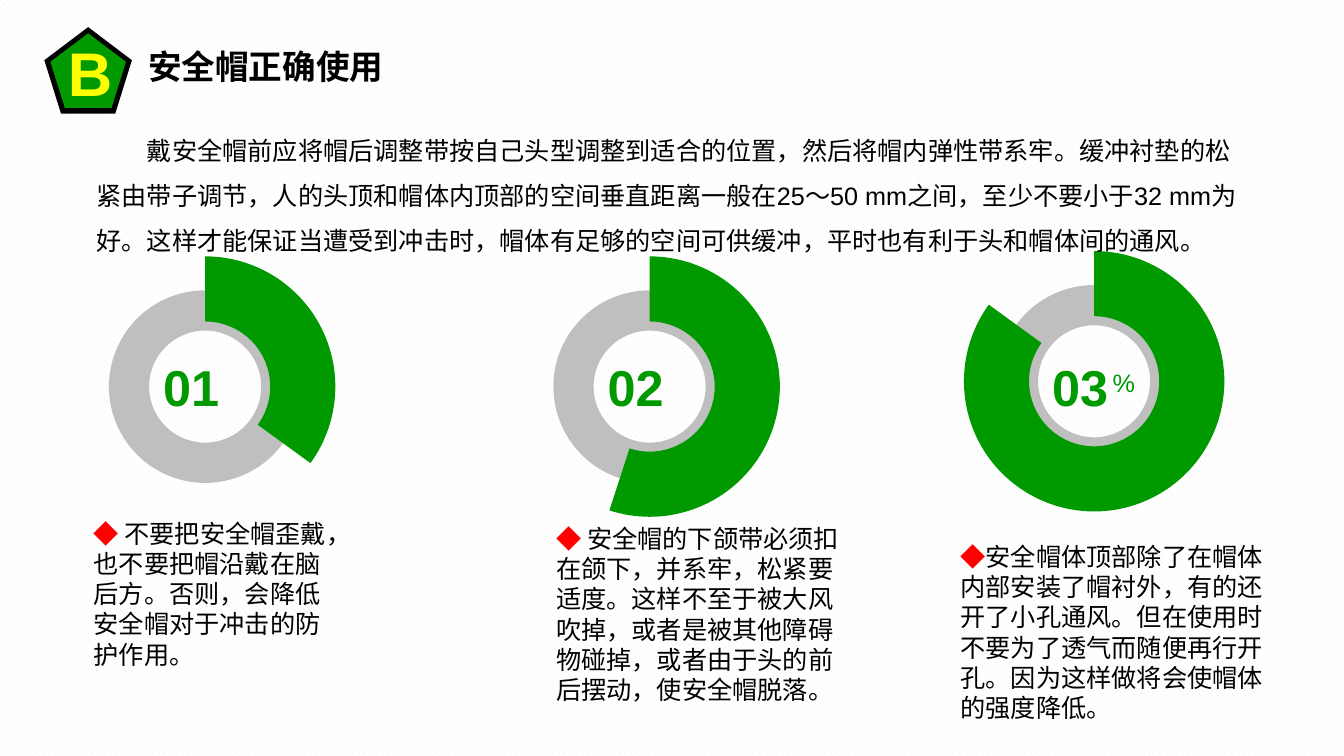
from lxml import etree
from pptx import Presentation
from pptx.chart.data import CategoryChartData
from pptx.dml.color import RGBColor
from pptx.enum import chart, dml, shapes, text
from pptx.util import Pt

FONT = "Arial"
COLORS = {"green": "009900", "gray": "BFBFBF", "black": "000000", "red": "FF0000",
          "yellow": "FFFF00", "white": "FFFFFF", "hatch": "F2F2F2"}
TITLE = "安全帽正确使用"
INTRO = ("戴安全帽前应将帽后调整带按自己头型调整到适合的位置，然后将帽内弹性带系牢。"
         "缓冲衬垫的松紧由带子调节，人的头顶和帽体内顶部的空间垂直距离一般在25～50 mm之间，"
         "至少不要小于32 mm为好。这样才能保证当遭受到冲击时，帽体有足够的空间可供缓冲，"
         "平时也有利于头和帽体间的通风。")
RULES = [
    {"no": "01", "share": 35, "ring_top": 207.4, "box": (59.8, 366.5, 180.7, 116.6),
     "body": " 不要把安全帽歪戴，也不要把帽沿戴在脑后方。否则，会降低安全帽对于冲击的防护作用。"},
    {"no": "02", "share": 55, "ring_top": 207.4, "box": (390.2, 370.1, 222.5, 138.2),
     "body": " 安全帽的下颌带必须扣在颌下，并系牢，松紧要适度。这样不至于被大风吹掉，"
             "或者是被其他障碍物碰掉，或者由于头的前后摆动，使安全帽脱落。"},
    {"no": "03", "share": 85, "ring_top": 203.6, "box": (679, 383, 230.4, 138.2),
     "body": "安全帽体顶部除了在帽体内部安装了帽衬外，有的还开了小孔通风。"
             "但在使用时不要为了透气而随便再行开孔。因为这样做将会使帽体的强度降低。"},
]
RING, RING_LEFT, RING_STEP = 137.5, 77.8, 317.5
CHART_W, CHART_H = 308.9, 205.9


def rgb(name):
    return RGBColor.from_string(COLORS[name])


def style(font, size, color, bold=False):
    font.name, font.size, font.bold = FONT, Pt(size), bold
    font.color.rgb = rgb(color)


def add_shape(s, kind, box, color):
    sp = s.shapes.add_shape(kind, *map(Pt, box))
    sp.shadow.inherit = False
    sp.fill.solid()
    sp.fill.fore_color.rgb = rgb(color)
    sp.line.fill.background()
    return sp


def add_text(s, box, runs, size, color, bold=False, wrap=False):
    tf = s.shapes.add_textbox(*map(Pt, box)).text_frame
    tf.word_wrap = wrap
    p = tf.paragraphs[0]
    style(p.font, size, color, bold)
    for words, run_color in runs:
        r = p.add_run()
        r.text = words
        if run_color != color:
            r.font.color.rgb = rgb(run_color)
    return p


def add_doughnut(s, box, share):
    data = CategoryChartData()
    data.categories = ["1", "2"]
    data.add_series("Series 1", (share, 100 - share))
    ch = s.shapes.add_chart(chart.XL_CHART_TYPE.DOUGHNUT, *map(Pt, box), data).chart
    ch.has_legend = ch.has_title = False
    style(ch.font, 10, "black")
    plot = ch.plots[0]
    plot.vary_by_categories = True
    plot._element.find("{*}holeSize").set("val", "60")
    done, rest = (plot.series[0].points[i].format for i in range(2))
    done.fill.solid()
    done.fill.fore_color.rgb = rgb("green")
    rest.fill.background()
    for part in (done, rest):
        part.line.fill.background()


def add_rule(s, i, rule):
    left, top = RING_LEFT + i * RING_STEP, rule["ring_top"]
    ring = add_shape(s, shapes.MSO_SHAPE.DONUT, (left, top, RING, RING), "gray")
    ring.adjustments[0] = 0.209
    add_doughnut(s, (left + (RING - CHART_W) / 2, top + (RING - CHART_H) / 2,
                     CHART_W, CHART_H), rule["share"])
    add_text(s, (left + 31.7, 250.6, 54.7, 51), [(rule["no"], "green")], 36, "green", True)
    add_text(s, rule["box"], [("◆", "red"), (rule["body"], "black")], 18, "black", wrap=True)


def main():
    prs = Presentation()
    prs.slide_width, prs.slide_height = Pt(960), Pt(540)
    s = prs.slides.add_slide(prs.slide_layouts[5])
    fill = s.background.fill
    fill.patterned()
    fill.pattern = dml.MSO_PATTERN.WIDE_DOWNWARD_DIAGONAL
    fill.fore_color.rgb, fill.back_color.rgb = rgb("hatch"), rgb("white")

    title = s.shapes.title
    title.left, title.top, title.width, title.height = map(Pt, (98.6, 29.5, 184.3, 36))
    tf = title.text_frame
    tf.text = TITLE
    tf.word_wrap = False
    tf.auto_size = text.MSO_AUTO_SIZE.NONE
    tf.vertical_anchor = text.MSO_ANCHOR.TOP
    tf.paragraphs[0].alignment = text.PP_ALIGN.LEFT
    style(tf.paragraphs[0].font, 24, "black", True)

    for i, rule in enumerate(RULES):
        add_rule(s, i, rule)
    add_text(s, (787.7, 258.5, 31, 28.8), [("%", "green")], 18, "green")

    pentagon = shapes.MSO_SHAPE.REGULAR_PENTAGON
    add_shape(s, pentagon, (31.7, 19.4, 62.6, 61.9), "black")
    add_shape(s, pentagon, (36, 23.8, 54, 53.3), "green")
    badge = add_text(s, (41, 21.6, 46.8, 60.5), [("B", "yellow")], 44, "yellow", True)
    badge.alignment = text.PP_ALIGN.CENTER

    intro = add_text(s, (61.9, 82.1, 831.6, 101.5), [(INTRO, "black")], 18, "black", wrap=True)
    intro.line_spacing = 1.5
    intro._p.get_or_add_pPr().set("indent", str(Pt(36)))
    prs.save("out.pptx")


if __name__ == "__main__":
    main()
